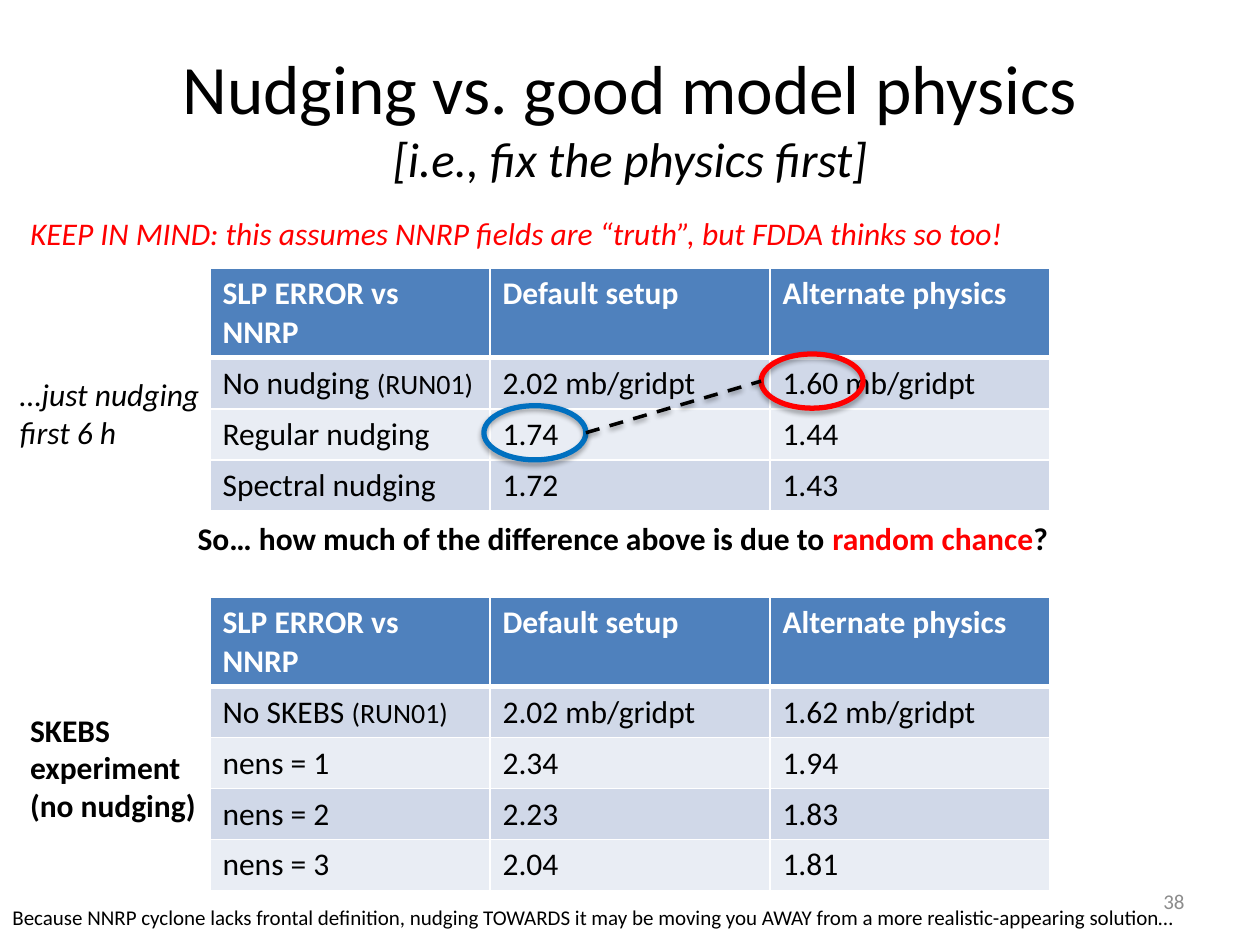
import pptx
import pptx.util
import pptx.dml.color
import pptx.enum.dml
import pptx.enum.shapes
import pptx.enum.text
import pptx.oxml
import pptx.oxml.ns

Inches, Pt = pptx.util.Inches, pptx.util.Pt
ALIGN = pptx.enum.text.PP_ALIGN
ANCHOR = pptx.enum.text.MSO_ANCHOR

FONT = "Calibri"
HEX = {"black": "000000", "white": "FFFFFF", "red": "FF0000", "blue": "0070C0",
       "gray": "8C8C8C", "head": "4F81BD", "dark": "D0D8E8", "light": "E9EDF4"}
WIDE, HIGH = 10, 7.5

TITLE = [("Nudging vs. good model physics", 39.6, ""),
         ("[i.e., fix the physics first]", 27.9, "i")]
HEADS = ["SLP ERROR vs NNRP", "Default setup", "Alternate physics"]
# A tuple in a first column is a label and its smaller suffix.
TABLES = [
    (2.13, [HEADS,
            [("No nudging ", "(RUN01)"), "2.02 mb/gridpt", "1.60 mb/gridpt"],
            ["Regular nudging", "1.74", "1.44"],
            ["Spectral nudging", "1.72", "1.43"]]),
    (4.74, [HEADS,
            [("No SKEBS ", "(RUN01)"), "2.02 mb/gridpt", "1.62 mb/gridpt"],
            ["nens = 1", "2.34", "1.94"],
            ["nens = 2", "2.23", "1.83"],
            ["nens = 3", "2.04", "1.81"]]),
]
GRID_W, HEAD_H, ROW_H = WIDE * 2 / 3, 0.71, 0.405

# Box, size, style, then lines of (text, colour) runs.
NOTES = [
    ((1.47, 4.07, 7.15, 0.4), 18, "b",
     [[("So… how much of the difference above is due to ", "black"),
       ("random chance", "red"), ("?", "black")]]),
    ((0.14, 5.59, 1.53, 1.01), 18, "b",
     [[("SKEBS", "black")], [("experiment", "black")], [("(no nudging)", "black")]]),
    ((0.06, 2.93, 1.72, 0.71), 18, "i",
     [[("…just nudging", "black")], [("first 6 h", "black")]]),
    ((0.14, 1.65, 8.1, 0.4), 18, "i",
     [[("KEEP IN MIND: this assumes NNRP fields are “truth”, "
        "but FDDA thinks so too!", "red")]]),
    ((0, 7.13, 9.45, 0.3), 12, "",
     [[("Because NNRP cyclone lacks frontal definition, nudging TOWARDS it may be "
        "moving you AWAY from a more realistic-appearing solution…", "black")]]),
]
PAGE = ((7.17, 6.95, 2.33, 0.4), 12, "", [[("38", "gray")]])
RING_W, RING_H = 0.81, 0.43
RINGS = [(3.84, 3.22, "blue"), (6.04, 2.81, "red")]


def rgb(name):
    return pptx.dml.color.RGBColor.from_string(HEX[name])


def add_run(para, text, size, color="black", style=""):
    run = para.add_run()
    run.text = text
    font = run.font
    font.name, font.size = FONT, Pt(size)
    font.bold, font.italic = "b" in style, "i" in style
    font.color.rgb = rgb(color)


def add_note(slide, box, size, style, lines):
    frame = slide.shapes.add_textbox(*map(Inches, box)).text_frame
    frame.word_wrap = False
    for i, line in enumerate(lines):
        para = frame.add_paragraph() if i else frame.paragraphs[0]
        for text, color in line:
            add_run(para, text, size, color, style)
    return frame


def edge(cell, side, width):
    """Draw a white border on one side (L, R, T or B) of a cell."""
    cell._tc.get_or_add_tcPr().append(pptx.oxml.parse_xml(
        f'<a:ln{side} {pptx.oxml.ns.nsdecls("a")} w="{Pt(width)}"><a:solidFill>'
        f'<a:srgbClr val="{HEX["white"]}"/></a:solidFill></a:ln{side}>'))


def add_grid(slide, top, rows):
    cols = len(rows[0])
    high = HEAD_H + ROW_H * (len(rows) - 1)
    box = ((WIDE - GRID_W) / 2, top, GRID_W, high)
    table = slide.shapes.add_table(len(rows), cols, *map(Inches, box)).table
    for col in table.columns:
        col.width = Inches(GRID_W / cols)
    for r, row in enumerate(rows):
        table.rows[r].height = Inches(ROW_H if r else HEAD_H)
        for c, value in enumerate(row):
            cell = table.cell(r, c)
            for side in "LRTB":
                thick = (r == 0 and side == "B") or (r == 1 and side == "T")
                edge(cell, side, 3 if thick else 1)
            cell.fill.solid()
            cell.fill.fore_color.rgb = rgb(("light", "dark")[r % 2] if r else "head")
            para = cell.text_frame.paragraphs[0]
            parts = value if isinstance(value, tuple) else (value,)
            for text, size in zip(parts, (18, 16)):
                add_run(para, text, size, "black" if r else "white", "" if r else "b")


def shade(shape, alpha, dist):
    """Give a shape a soft shadow that falls straight down."""
    shape._element.spPr.append(pptx.oxml.parse_xml(
        f'<a:effectLst {pptx.oxml.ns.nsdecls("a")}><a:outerShdw blurRad="{Pt(3.1)}" '
        f'dist="{Pt(dist)}" dir="5400000" rotWithShape="0">'
        f'<a:srgbClr val="{HEX["black"]}"><a:alpha val="{alpha * 1000}"/></a:srgbClr>'
        '</a:outerShdw></a:effectLst>'))


def add_ring(slide, left, top, color):
    ring = slide.shapes.add_shape(pptx.enum.shapes.MSO_SHAPE.OVAL,
                                  *map(Inches, (left, top, RING_W, RING_H)))
    ring.fill.background()
    ring.line.color.rgb = rgb(color)
    ring.line.width = Pt(3)
    shade(ring, 35, 1.8)
    return ring


def add_link(slide, start, end):
    """Join the right side of one ring to the left side of the next."""
    link = slide.shapes.add_connector(
        pptx.enum.shapes.MSO_CONNECTOR.STRAIGHT,
        start.left + start.width, start.top + start.height // 2,
        end.left, end.top + end.height // 2)
    link.line.color.rgb = rgb("black")
    link.line.width = Pt(2)
    link.line.dash_style = pptx.enum.dml.MSO_LINE.DASH
    shade(link, 38, 1.6)


def add_title(slide):
    title = slide.shapes.title
    title.left, title.top, title.width, title.height = map(Inches, (0.5, 0.3, 9, 1.25))
    frame = title.text_frame
    frame.auto_size = pptx.enum.text.MSO_AUTO_SIZE.NONE
    frame.vertical_anchor = ANCHOR.MIDDLE
    para = frame.paragraphs[0]
    para.alignment = ALIGN.CENTER
    for i, (text, size, style) in enumerate(TITLE):
        if i:
            para.add_line_break()
        add_run(para, text, size, "black", style)


def main():
    deck = pptx.Presentation()
    deck.slide_width, deck.slide_height = Inches(WIDE), Inches(HIGH)
    slide = deck.slides.add_slide(deck.slide_layouts.get_by_name("Title Only"))
    add_title(slide)
    page = add_note(slide, *PAGE)
    page.word_wrap = True
    page.vertical_anchor = ANCHOR.MIDDLE
    page.paragraphs[0].alignment = ALIGN.RIGHT
    for top, rows in TABLES:
        add_grid(slide, top, rows)
    for note in NOTES:
        add_note(slide, *note)
    add_link(slide, *[add_ring(slide, *ring) for ring in RINGS])
    deck.save("out.pptx")


if __name__ == "__main__":
    main()
